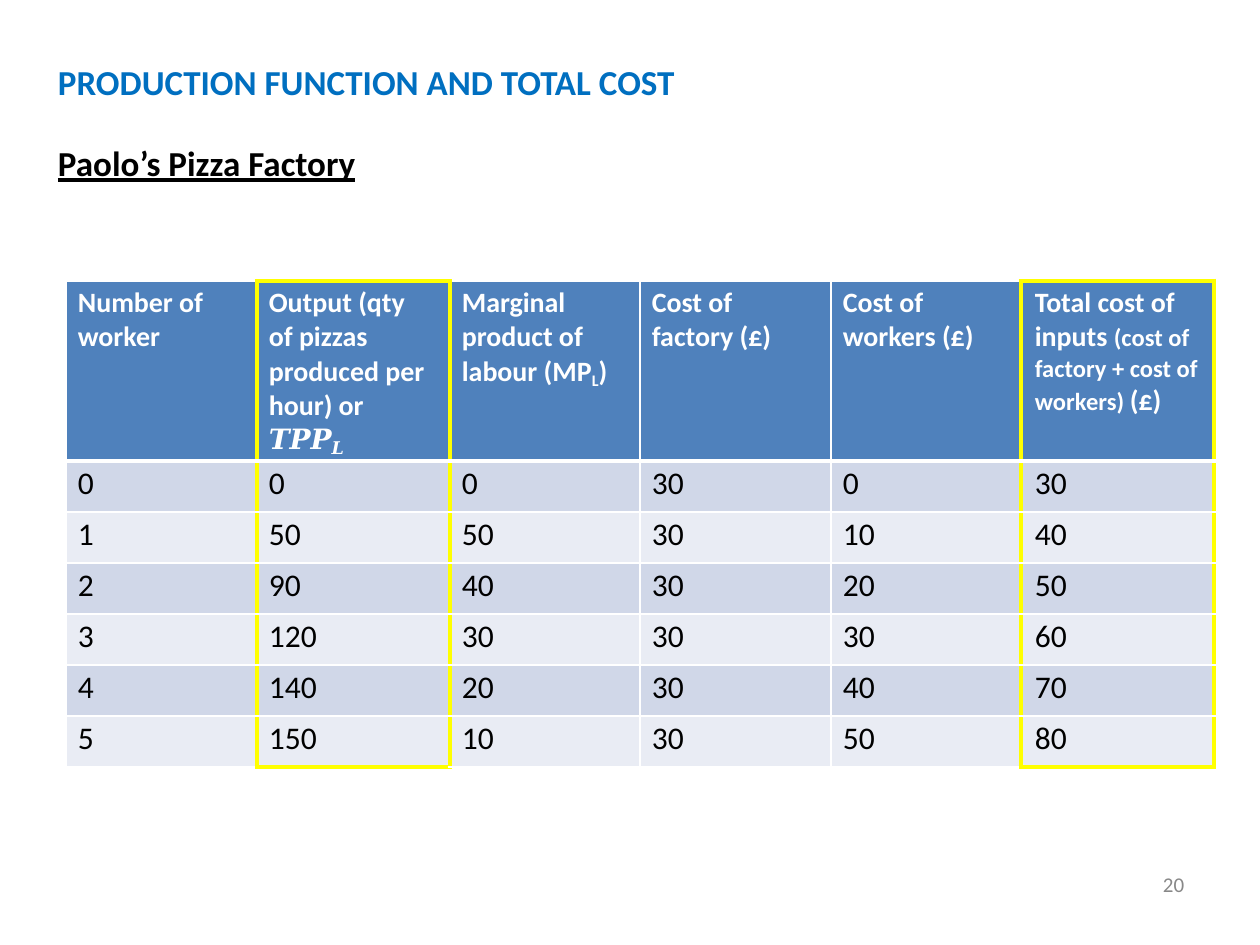
from lxml.etree import SubElement
from pptx import Presentation
from pptx.dml.color import RGBColor
from pptx.oxml import parse_xml
from pptx.oxml.ns import nsdecls
from pptx.util import Emu, Pt

PX = 914400 / 126
COLORS = {
    "title": "006FC0", "text": "000000", "page": "888888", "white": "FFFFFF",
    "header": "4F81BC", "band": "D0D7E8", "light": "E9ECF4", "mark": "FFFF00",
}


def px(n):
    return Emu(round(n * PX))


def add_run(p, text, color, baseline=0, **formats):
    """Append a run; baseline is an offset in percent of the text size."""
    r = p.add_run()
    r.text = text
    r.font.color.rgb = RGBColor.from_string(COLORS[color])
    for name, value in {"name": "Calibri", **formats}.items():
        setattr(r.font, name, value)
    if baseline:
        r.font._element.set("baseline", str(baseline * 1000))


prs = Presentation()
prs.slide_width, prs.slide_height = px(1260), px(945)
s = prs.slides.add_slide(prs.slide_layouts[6])

# Title, subtitle and page number
boxes = [
    ((58, 58, 619, 126), 3, [
        ("PRODUCTION FUNCTION AND TOTAL COST", "title",
         {"size": Pt(20), "bold": True}, {}),
        ("Paolo’s Pizza Factory", "text",
         {"size": Pt(20), "bold": True, "underline": True}, {"space_before": Pt(22)}),
    ]),
    ((1163, 838, 36, 77), 53, [
        ("20", "page", {"size": Pt(12)}, {"line_spacing": Pt(12.4)}),
    ]),
]
for at, top, lines in boxes:
    tf = s.shapes.add_textbox(*map(px, at)).text_frame
    margins = {"margin_left": 0, "margin_right": 0, "margin_bottom": 0}
    for name, value in {**margins, "margin_top": px(top), "word_wrap": True}.items():
        setattr(tf, name, value)
    for i, (text, color, formats, spacing) in enumerate(lines):
        p = tf.add_paragraph() if i else tf.paragraphs[0]
        for name, value in spacing.items():
            setattr(p, name, value)
        add_run(p, text, color, **formats)

# Each header is a list of paragraphs, each paragraph a list of (text, formats)
headers = [
    [[("Number of worker", {})]],
    [[("Output (qty of pizzas produced per hour) or", {})],
     [("𝑻𝑷𝑷", {"name": "Cambria", "bold": False}),
      ("𝑳", {"name": "Cambria", "bold": False, "size": Pt(17.2), "baseline": -14})]],
    [[("Marginal product of labour (MP", {}),
      ("L", {"size": Pt(15.8), "baseline": -21}), (")", {})]],
    [[("Cost of factory (£)", {})]],
    [[("Cost of workers (£)", {})]],
    [[("Total cost of inputs ", {}),
      ("(cost of factory + cost of workers) ", {"size": Pt(14)}), ("(£)", {})]],
]
outputs = [0, 50, 90, 120, 140, 150]
marginal = [0, 50, 40, 30, 20, 10]
factory_cost, wage = 30, 10
data = [
    (n, out, mp, factory_cost, wage * n, factory_cost + wage * n)
    for n, (out, mp) in enumerate(zip(outputs, marginal))
]
body = [[[[(str(value), {})]] for value in row] for row in data]

widths = [191, 193, 190, 191, 190, 193]
heights = [180] + [51] * len(data)
marked = (1, 5)
last_row = len(heights) - 1

frame = s.shapes.add_table(len(heights), len(widths), px(66), px(281),
                           px(sum(widths)), px(sum(heights)))
table = frame.table
table.first_row = table.horz_banding = False
for column, width in zip(table.columns, widths):
    column.width = px(width)
for row, height in zip(table.rows, heights):
    row.height = px(height)

for i, row in enumerate([headers] + body):
    fill = "header" if i == 0 else "band" if i % 2 else "light"
    color = "text" if i else "white"
    font = {"size": Pt(18 if i else 16), "bold": i == 0}
    for j, paragraphs in enumerate(row):
        cell = table.cell(i, j)
        cell.fill.solid()
        cell.fill.fore_color.rgb = RGBColor.from_string(COLORS[fill])
        margins = {
            "margin_left": px(14 if j == 5 else 12), "margin_right": px(8 if j == 5 else 22),
            "margin_top": px(4 if i else 5), "margin_bottom": 0,
        }
        for name, value in margins.items():
            setattr(cell, name, value)
        for k, runs in enumerate(paragraphs):
            p = cell.text_frame.add_paragraph() if k else cell.text_frame.paragraphs[0]
            for text, formats in runs:
                add_run(p, text, color, **{**font, **formats})

        # Yellow frames round the marked columns, a thick white rule under the header
        yellow = {
            "L": j in marked or j - 1 in marked,
            "R": j in marked or j + 1 in marked,
            "T": j in marked and i == 0,
            "B": j in marked and i == last_row,
        }
        rule = {"T": i == 1, "B": i == 0}
        tcPr = cell._tc.get_or_add_tcPr()
        for k, (side, on) in enumerate(yellow.items()):
            width = Pt(3 if on or rule.get(side) else 1)
            ln = parse_xml(f'<a:ln{side} {nsdecls("a")} w="{width}"><a:solidFill/></a:ln{side}>')
            SubElement(ln[0], ln[0].tag.replace("solidFill", "srgbClr"),
                       val=COLORS["mark" if on else "white"])
            tcPr.insert(k, ln)

prs.save("out.pptx")
